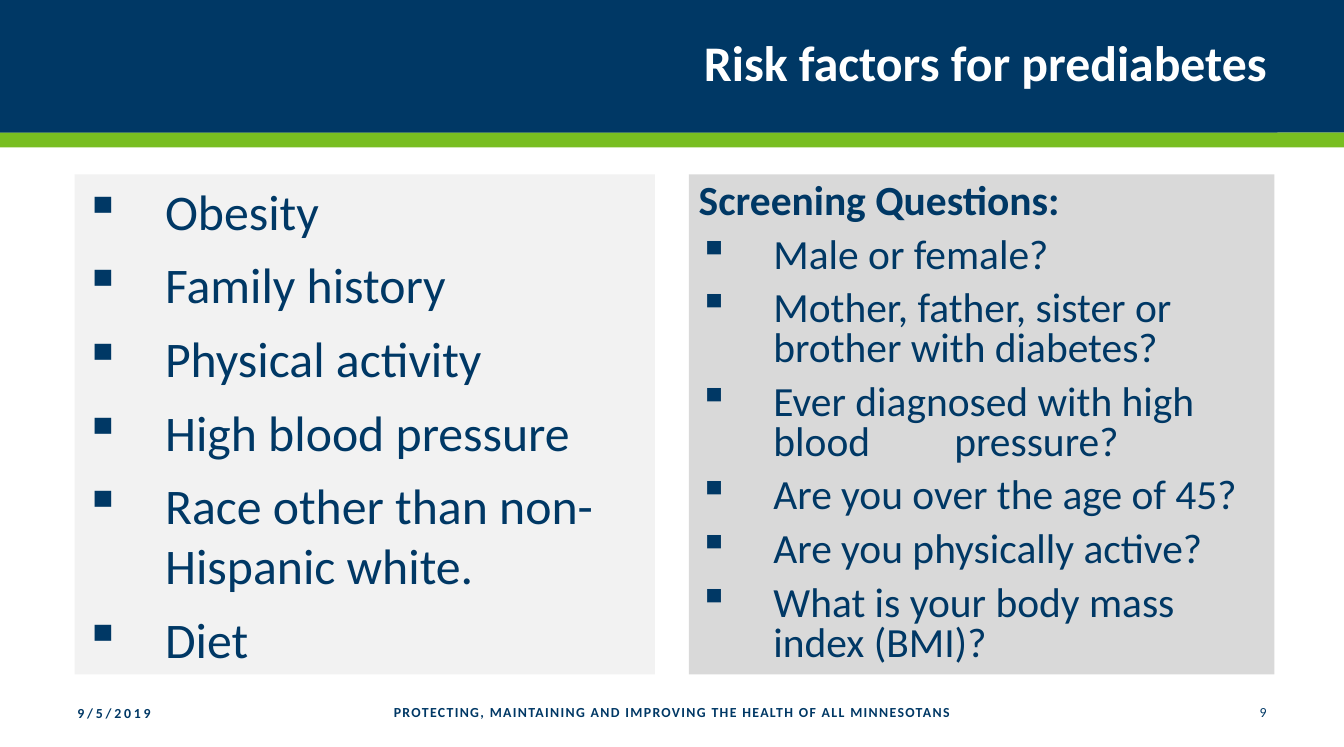
import pptx
import pptx.dml.color
import pptx.enum.shapes
import pptx.enum.text
import pptx.oxml
import pptx.oxml.ns
import pptx.util

PX = 9144  # 100 px to the inch
NAVY, GREEN, WHITE = "003865", "78BE21", "FFFFFF"
PALE_GRAY, MID_GRAY = "F2F2F2", "D9D9D9"
ALIGN = pptx.enum.text.PP_ALIGN
MIDDLE = pptx.enum.text.MSO_ANCHOR.MIDDLE
WIDE_GAP = 54

RISK_FACTORS = [
    "Obesity",
    "Family history",
    "Physical activity",
    "High blood pressure",
    "Race other than non-Hispanic white.",
    "Diet",
]
QUESTIONS = [
    "Male or female?",
    "Mother, father, sister or brother with diabetes?",
    ("Ever diagnosed with high blood", "pressure?"),
    "Are you over the age of 45?",
    "Are you physically active?",
    "What is your body mass index (BMI)?",
]


def rgb(value):
    return pptx.dml.color.RGBColor.from_string(value)


def px(*lengths):
    return [pptx.util.Emu(n * PX) for n in lengths]


def set_attrs(target, values):
    for name, value in values.items():
        setattr(target, name, value)


def paint(sp, fill):
    sp.fill.solid()
    sp.fill.fore_color.rgb = rgb(fill)
    sp.line.fill.background()


def add_rect(slide, box, fill):
    kind = pptx.enum.shapes.MSO_SHAPE.RECTANGLE
    sp = slide.shapes.add_shape(kind, *px(*box))
    sp.shadow.inherit = False
    paint(sp, fill)
    return sp


def add_run(p, text, size, color=NAVY, bold=False, spacing=0):
    """Add a run; spacing is the extra space after each letter, in points."""
    r = p.add_run()
    r.text = text
    values = {"name": "Calibri", "size": pptx.util.Pt(size), "bold": bold}
    set_attrs(r.font, values)
    r.font.color.rgb = rgb(color)
    if spacing:
        r.font._element.set("spc", str(spacing * 100))


def set_bullet(p, indent):
    pPr = p._p.get_or_add_pPr()
    left = indent * PX
    pPr.set("marL", str(left))
    pPr.set("indent", str(-left))
    color = pptx.oxml.ns.qn("a:buClr")
    srgb = pptx.oxml.ns.qn("a:srgbClr")
    char = pptx.oxml.ns.qn("a:buChar")
    bullet_color = pPr.makeelement(color, {})
    bullet_color.append(pPr.makeelement(srgb, {"val": NAVY}))
    pPr.append(bullet_color)
    pPr.append(pPr.makeelement(char, {"char": "▪"}))


def add_panel(slide, box, fill, items, size, indent, line_spacing, heading=None):
    tf = add_rect(slide, box, fill).text_frame
    set_attrs(tf, {"word_wrap": True, "vertical_anchor": MIDDLE})
    lines = ([heading] if heading else []) + items
    for i, line in enumerate(lines):
        p = tf.paragraphs[0] if i == 0 else tf.add_paragraph()
        set_attrs(p, {
            "alignment": ALIGN.LEFT,
            "line_spacing": line_spacing,
            "space_before": pptx.util.Pt(10),
        })
        is_heading = line == heading
        if not is_heading:
            set_bullet(p, indent)
        parts = [line] if isinstance(line, str) else line
        for n, part in enumerate(parts):
            if n:
                add_run(p, " ", size, spacing=WIDE_GAP)
            add_run(p, part, size, bold=is_heading)


def add_footer(slide, box, text, align, bold, spacing):
    tf = slide.shapes.add_textbox(*px(*box)).text_frame
    set_attrs(tf, {"word_wrap": True, "vertical_anchor": MIDDLE})
    p = tf.paragraphs[0]
    p.alignment = align
    add_run(p, text, 10, bold=bold, spacing=spacing)


def set_title(slide, box, text):
    title = slide.shapes.title
    set_attrs(title, dict(zip(("left", "top", "width", "height"), px(*box))))
    paint(title, NAVY)
    tf = title.text_frame
    set_attrs(tf, {
        "word_wrap": True,
        "vertical_anchor": MIDDLE,
        "auto_size": pptx.enum.text.MSO_AUTO_SIZE.NONE,
    })
    p = tf.paragraphs[0]
    set_attrs(p, {"alignment": ALIGN.RIGHT, "line_spacing": 0.9})
    add_run(p, text, 36, WHITE, bold=True)
    # Bring the title in front of the header band
    slide.shapes.element.append(title.element)


def main():
    prs = pptx.Presentation()
    prs.slide_width, prs.slide_height = px(1350, 750)
    slide = prs.slides.add_slide(prs.slide_layouts[5])

    add_rect(slide, (0, 133, 1350, 15), GREEN)
    add_rect(slide, (0, 0, 1350, 133), NAVY)
    set_title(slide, (0, -1, 1283, 134), "Risk factors for prediabetes")

    add_panel(slide, (75, 175, 583, 502), PALE_GRAY, RISK_FACTORS,
              size=36, indent=81, line_spacing=1.0)
    add_panel(slide, (692, 175, 588, 502), MID_GRAY, QUESTIONS,
              size=30, indent=75, line_spacing=0.8,
              heading="Screening Questions:")

    add_footer(slide, (68, 696, 154, 40), "9/5/2019", ALIGN.LEFT, True, 2)
    add_footer(slide, (222, 695, 906, 40),
               "PROTECTING, MAINTAINING AND IMPROVING THE HEALTH OF ALL MINNESOTANS",
               ALIGN.CENTER, True, 1)
    add_footer(slide, (1128, 695, 154, 40), "9", ALIGN.RIGHT, False, 2)

    prs.save("out.pptx")


if __name__ == "__main__":
    main()
